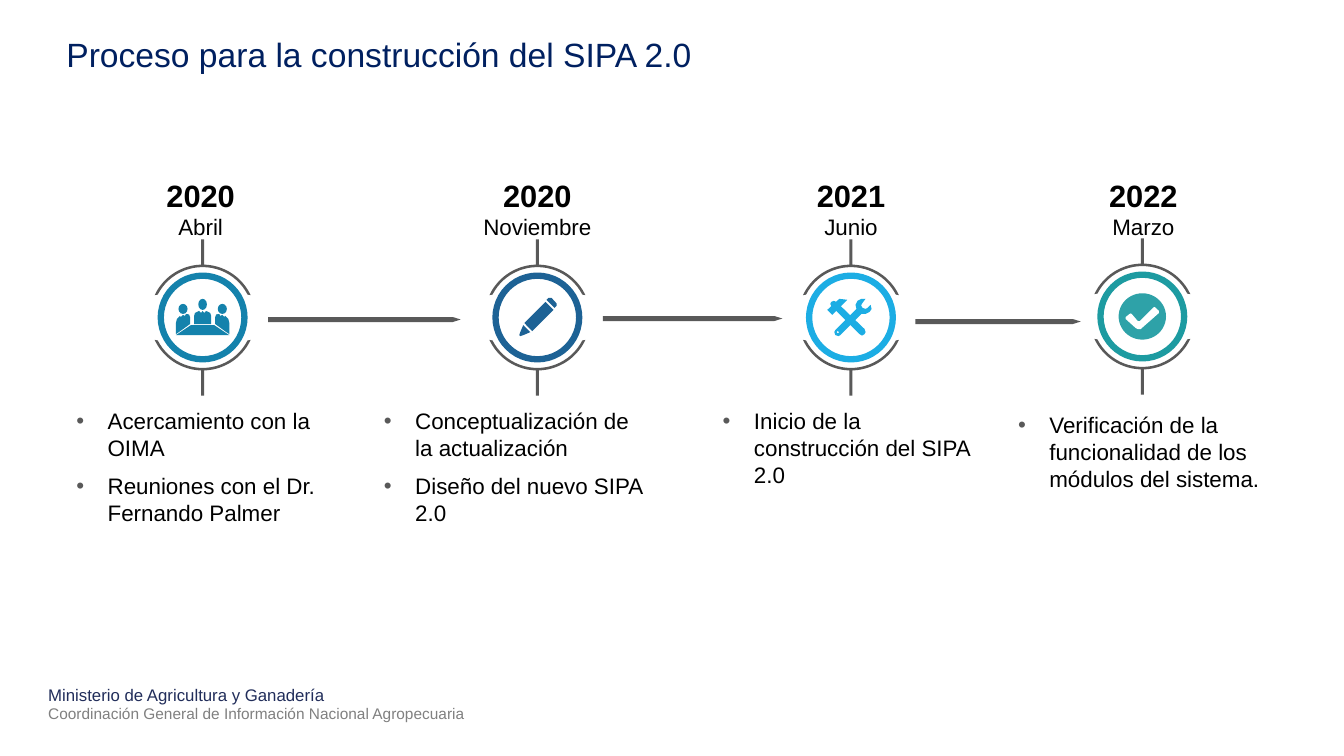
"""Build the SIPA 2.0 construction timeline slide."""
from dataclasses import dataclass
from math import cos, radians, sin

from lxml import etree
from pptx import Presentation
from pptx.dml.color import RGBColor
from pptx.enum.shapes import MSO_SHAPE
from pptx.enum.text import MSO_ANCHOR, PP_ALIGN
from pptx.oxml.ns import qn
from pptx.util import Inches, Pt

OVAL = MSO_SHAPE.OVAL
BOTTOM, TOP = MSO_ANCHOR.BOTTOM, MSO_ANCHOR.TOP
LEFT, CENTER = PP_ALIGN.LEFT, PP_ALIGN.CENTER
FONT = "Arial"
COLORS = {
    "title": "002060", "ministry": "212D5A", "office": "808080",
    "text": "000000", "gray": "595959", "white": "FFFFFF",
    "meeting": "1482AC", "design": "1D6295", "build": "1CADE4",
    "verify": "1D9BA1", "check": "2EA2A8",
}
RING_SIZE = 0.83
Points = list[tuple[float, float]]


@dataclass
class Line:
    text: str
    size: float
    color: str = "text"
    bold: bool = False


@dataclass
class Icon:
    """Outlines in hundredths of an inch around the stage centre."""
    color: str
    polygons: list[Points]
    dots: list[tuple[float, float, float, float]]
    cutouts: list[Points]


@dataclass
class Stage:
    x: float
    y: float
    color: str
    icon: Icon
    year: str
    month: str
    label: tuple[float, float]
    bullets: list[str]
    bullet_box: tuple[float, float, float, float]


@dataclass
class Arrow:
    left: float
    middle: float
    width: float


def mirrored(points: Points) -> Points:
    return [(-x, y) for x, y in reversed(points)]


ATTENDEE = [(-26.5, 16.5), (-26.5, 5.5), (-25.5, 1.5), (-22.5, -1.5), (-21.5, -0.5),
            (-19.5, -2.5), (-17.5, -1.5), (-16.5, -3.5), (-13.5, -3), (-12.5, -0.5),
            (-12.5, 6.5), (-23.5, 14.5)]
SHOULDER = [(-8.5, 6.5), (-8.5, -1.5), (-7.5, -4.5), (-3.5, -6.5), (-1.5, -4.5), (0, -6.5)]
TABLE = [(-26.5, 17.5), (-11.5, 7.5), (11.5, 7.5), (26.5, 17.5)]
MEETING = Icon("meeting", [ATTENDEE, mirrored(ATTENDEE), SHOULDER + mirrored(SHOULDER), TABLE],
               [(-19.5, -8.5, 9, 10), (0, -13, 8.5, 11), (19.5, -8.5, 9, 10)], [])
PENCIL = Icon("design", [
    [(-14, 7.5), (-17, 14.5), (-18, 17.5), (-17, 18.5), (-14, 17.5), (-7, 14.5)],
    [(8, -15.5), (-13, 5.5), (-5, 13.5), (16, -7.5)],
    [(9, -17.5), (11, -19.5), (14, -19.5), (19, -14), (19, -11.5), (17, -9.5)],
], [], [])
TOOLS = Icon("build", [
    [(18.5, -5.5), (20.5, -8.5), (19.5, -12.5), (16.5, -9.5), (14.5, -8.5), (11.5, -9.5),
     (10, -12), (11.5, -14.5), (14.5, -18.5), (10.5, -18.5), (6.5, -16.5), (4.5, -12.5),
     (5.5, -8.5), (-15.5, 12.5), (-16.5, 14.5), (-15.5, 17.5), (-12.5, 18.5),
     (-10.5, 17.5), (10.5, -3.5), (14.5, -3.5)],
    [(-14.5, -15.5), (-17, -16.5), (-19.5, -15.5), (-20.5, -13.5), (-19.5, -11.5),
     (8.5, 16.5), (11, 18), (13.5, 16.5), (14.5, 14.5), (13.5, 11.5)],
    [(-3.5, -17.5), (-11.5, -18.5), (-23.5, -7.5), (-18.5, -2.5), (-10.5, -10.5)],
], [], [[(-14, 14.5), (-13, 13.5), (-12, 14.5), (-13, 15.5)]])
CHECK = Icon("check", [], [(0, 0, 47, 46)], [
    [(16.5, -3.5), (16.5, -5.5), (13.5, -8.5), (12, -9.5), (10.5, -8.5), (-2.5, 4.5),
     (-4.5, 4.5), (-10.5, -2.5), (-12, -3), (-16.5, 0.5), (-16.5, 2.5), (-6.5, 11.5),
     (-4.5, 12.5), (-1.5, 12.5), (-0.5, 11.5)]])

STAGES = [
    Stage(2.01, 3.15, "meeting", MEETING, "2020", "Abril", (1.19, 1.6),
          ["Acercamiento con la OIMA", "Reuniones con el Dr. Fernando Palmer"],
          (0.66, 3.99, 2.73, 1.4)),
    Stage(5.33, 3.15, "design", PENCIL, "2020", "Noviembre", (4.61, 1.44),
          ["Conceptualización de la actualización", "Diseño del nuevo SIPA 2.0"],
          (3.71, 3.99, 2.85, 1.4)),
    Stage(8.44, 3.15, "build", TOOLS, "2021", "Junio", (7.83, 1.22),
          ["Inicio de la construcción del SIPA 2.0"], (7.07, 3.99, 2.73, 1.02)),
    Stage(11.33, 3.14, "verify", CHECK, "2022", "Marzo", (10.73, 1.22),
          ["Verificación de la funcionalidad de los módulos del sistema."],
          (10, 4.03, 2.73, 1.02)),
]
ARROWS = [Arrow(2.66, 3.17, 1.91), Arrow(5.98, 3.16, 1.78), Arrow(9.08, 3.19, 1.64)]


def rgb(name: str) -> RGBColor:
    return RGBColor.from_string(COLORS[name])


def paint(shape, color: str) -> None:
    shape.shadow.inherit = False
    shape.fill.solid()
    shape.fill.fore_color.rgb = rgb(color)
    shape.line.fill.background()


def add_outline(slide, contours: list[Points], color: str) -> None:
    paths = [[(Inches(x), Inches(y)) for x, y in points] for points in contours]
    builder = slide.shapes.build_freeform(*paths[0][0])
    builder.add_line_segments(paths[0][1:])
    for path in paths[1:]:
        builder.move_to(*path[0])
        builder.add_line_segments(path[1:])
    paint(builder.convert_to_shape(), color)


def add_oval(slide, x: float, y: float, width: float, height: float):
    return slide.shapes.add_shape(OVAL, Inches(x - width / 2), Inches(y - height / 2),
                                  Inches(width), Inches(height))


def add_text(slide, box: tuple[float, float, float, float], lines: list[Line],
             alignment=LEFT, anchor=TOP, bulleted: bool = False):
    shape = slide.shapes.add_textbox(*(Inches(length) for length in box))
    text_frame = shape.text_frame
    text_frame.word_wrap = True
    text_frame.vertical_anchor = anchor
    text_frame.text = "\n".join(line.text for line in lines)
    for paragraph, line in zip(text_frame.paragraphs, lines):
        paragraph.alignment = alignment
        if bulleted:
            add_bullet(paragraph)
        font = paragraph.runs[0].font
        font.name, font.size, font.bold = FONT, Pt(line.size), line.bold
        font.color.rgb = rgb(line.color)
    return text_frame


def add_bullet(paragraph) -> None:
    paragraph.space_after = Pt(8)
    properties = paragraph._p.get_or_add_pPr()
    properties.set("marL", str(Inches(0.31)))
    properties.set("indent", str(-Inches(0.31)))
    color = etree.SubElement(properties, qn("a:buClr"))
    etree.SubElement(color, qn("a:srgbClr"), val=COLORS["gray"])
    etree.SubElement(properties, qn("a:buFont"), typeface=FONT)
    etree.SubElement(properties, qn("a:buChar"), char="•")


def arc(radius: float, start: int, end: int) -> Points:
    steps = 24
    angles = [radians(start + (end - start) * step / steps) for step in range(steps + 1)]
    return [(radius * cos(angle), -radius * sin(angle)) for angle in angles]


def add_bracket(slide, stage: Stage) -> None:
    stem = [(-0.015, -0.525), (-0.015, -0.775), (0.015, -0.775), (0.015, -0.525)]
    upper = arc(0.525, 155, 92) + stem + arc(0.525, 88, 25) + arc(0.5, 27, 153)
    add_outline(slide, [[(stage.x + x, stage.y + side * y) for x, y in upper]
                        for side in (1, -1)], "gray")


def add_icon(slide, stage: Stage) -> None:
    icon = stage.icon
    for x, y, width, height in icon.dots:
        paint(add_oval(slide, stage.x + x / 100, stage.y + y / 100,
                       width / 100, height / 100), icon.color)
    for polygons, color in ((icon.polygons, icon.color), (icon.cutouts, "white")):
        for points in polygons:
            add_outline(slide, [[(stage.x + x / 100, stage.y + y / 100)
                                 for x, y in points]], color)


def add_stage(slide, stage: Stage) -> None:
    ring = add_oval(slide, stage.x, stage.y, RING_SIZE, RING_SIZE)
    ring.shadow.inherit = False
    ring.fill.background()
    ring.line.color.rgb = rgb(stage.color)
    ring.line.width = Pt(4.5)
    add_bracket(slide, stage)
    add_icon(slide, stage)
    left, width = stage.label
    add_text(slide, (left, 1.7, width, 0.74),
             [Line(stage.year, 22, bold=True), Line(stage.month, 16)], CENTER)
    add_text(slide, stage.bullet_box, [Line(text, 16) for text in stage.bullets], bulleted=True)


def add_arrow(slide, arrow: Arrow) -> None:
    right, top, bottom = arrow.left + arrow.width, arrow.middle - 0.025, arrow.middle + 0.025
    add_outline(slide, [[(arrow.left, top), (right - 0.08, top), (right, arrow.middle),
                         (right - 0.08, bottom), (arrow.left, bottom)]], "gray")


def main() -> None:
    presentation = Presentation()
    presentation.slide_width, presentation.slide_height = Inches(13.33), Inches(7.5)
    slide = presentation.slides.add_slide(presentation.slide_layouts[6])
    add_text(slide, (0.38, 6.74, 6.44, 0.5), [
        Line("Ministerio de Agricultura y Ganadería", 12, "ministry"),
        Line("Coordinación General de Información Nacional Agropecuaria", 11, "office")])
    title = add_text(slide, (0.56, 0.31, 12.22, 0.48),
                     [Line("Proceso para la construcción del SIPA 2.0", 24, "title")],
                     anchor=BOTTOM)
    title.paragraphs[0].line_spacing = 0.9
    for stage in STAGES:
        add_stage(slide, stage)
    for arrow in ARROWS:
        add_arrow(slide, arrow)
    presentation.save("out.pptx")


if __name__ == "__main__":
    main()
